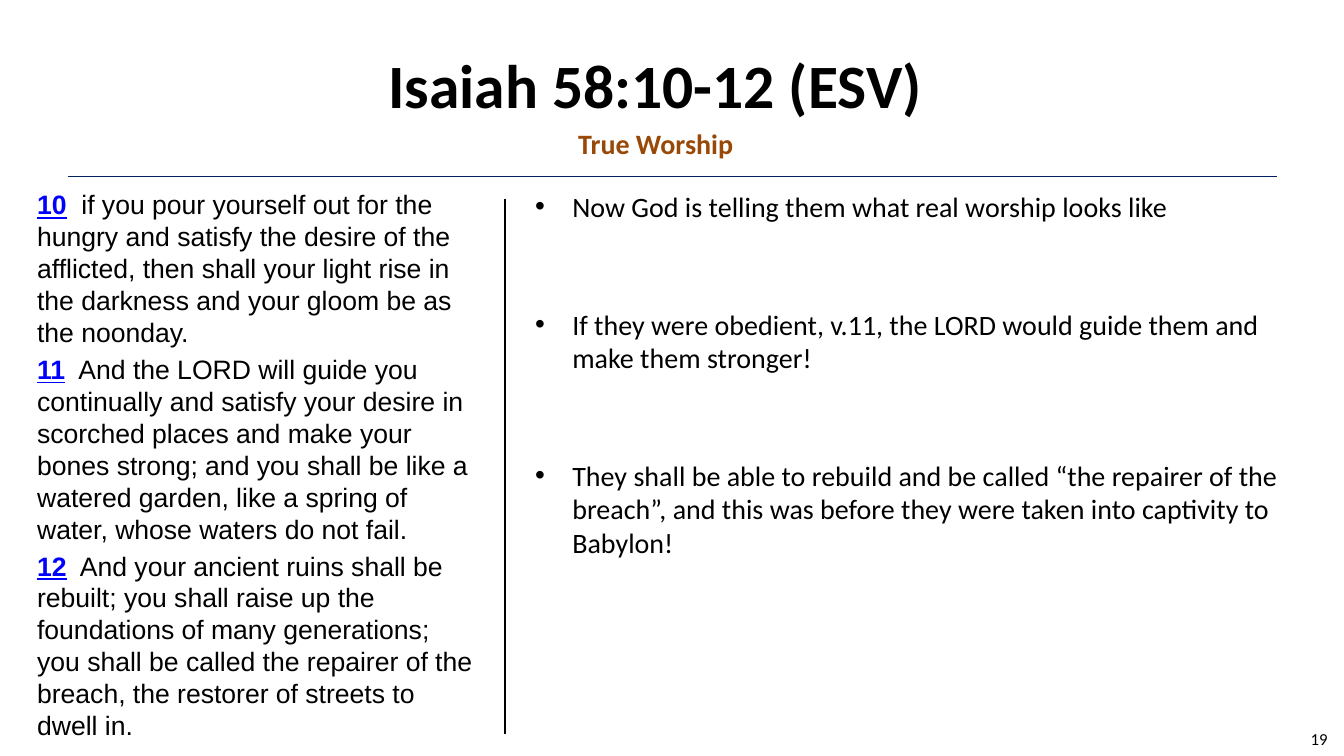
"""Build the Isaiah 58:10-12 scripture slide."""
from lxml import etree
from pptx import Presentation
from pptx.dml.color import RGBColor
from pptx.enum.shapes import MSO_CONNECTOR
from pptx.enum.text import MSO_ANCHOR, PP_ALIGN
from pptx.oxml.ns import qn
from pptx.util import Pt

LEFT, CENTER, RIGHT = PP_ALIGN.LEFT, PP_ALIGN.CENTER, PP_ALIGN.RIGHT
TOP, MIDDLE = MSO_ANCHOR.TOP, MSO_ANCHOR.MIDDLE
STRAIGHT = MSO_CONNECTOR.STRAIGHT

COLORS = {"text": "000000", "verse": "0000FF", "subtitle": "984807", "rule": "002060"}

LABELS = [
    ("Isaiah 58:10-12 (ESV)", (36.3, 15.12, 864, 90), 44, "text", True, CENTER, MIDDLE),
    ("True Worship", (370.08, 86.8, 196.56, 31.68), 20, "subtitle", True, CENTER, TOP),
    ("19", (883.44, 513.36, 72, 28.8), 12, "text", False, RIGHT, MIDDLE),
]
VERSES = [
    ("10", "if you pour yourself out for the hungry and satisfy the desire of the afflicted, "
           "then shall your light rise in the darkness and your gloom be as the noonday."),
    ("11", "And the LORD will guide you continually and satisfy your desire in scorched places "
           "and make your bones strong; and you shall be like a watered garden, "
           "like a spring of water, whose waters do not fail."),
    ("12", "And your ancient ruins shall be rebuilt; you shall raise up the foundations of many "
           "generations; you shall be called the repairer of the breach, "
           "the restorer of streets to dwell in."),
]
NOTES = [
    "Now God is telling them what real worship looks like",
    "If they were obedient, v.11, the LORD would guide them and make them stronger!",
    "They shall be able to rebuild and be called “the repairer of the breach”, "
    "and this was before they were taken into captivity to Babylon!",
]
VERSE_BOX = (19.44, 131.04, 328, 398.88)
NOTES_BOX = (375.12, 131.76, 565.92, 398.88)
RULES = [
    ((48.24, 126, 912.24, 126), "rule", 0.75),
    ((360.72, 141.84, 360.72, 524.16), "text", 1.5),
]
VERSE_GAP, NOTE_GAP, BULLET_INDENT = 3.6, 60, 26.64


def add_text_frame(slide, box, anchor=TOP):
    text_frame = slide.shapes.add_textbox(*map(Pt, box)).text_frame
    text_frame.word_wrap = True
    text_frame.vertical_anchor = anchor
    return text_frame


def next_paragraph(text_frame, index, gap):
    if index == 0:
        return text_frame.paragraphs[0]
    paragraph = text_frame.add_paragraph()
    paragraph.space_before = Pt(gap)
    return paragraph


def style(font, name, size, color, bold=False, underline=False):
    font.name, font.size = name, Pt(size)
    font.bold, font.underline = bold, underline
    font.color.rgb = RGBColor.from_string(COLORS[color])


def add_bullet(paragraph):
    properties = paragraph._p.get_or_add_pPr()
    properties.set("marL", str(Pt(BULLET_INDENT)))
    properties.set("indent", str(-Pt(BULLET_INDENT)))
    etree.SubElement(properties, qn("a:buFont")).set("typeface", "Arial")
    etree.SubElement(properties, qn("a:buChar")).set("char", "•")


def add_label(slide, text, box, size, color, bold, alignment, anchor):
    paragraph = add_text_frame(slide, box, anchor).paragraphs[0]
    paragraph.text = text
    paragraph.alignment = alignment
    style(paragraph.runs[0].font, "Calibri", size, color, bold)


def add_verses(slide):
    text_frame = add_text_frame(slide, VERSE_BOX)
    for index, (number, words) in enumerate(VERSES):
        paragraph = next_paragraph(text_frame, index, VERSE_GAP)
        paragraph.alignment = LEFT
        number_run, words_run = paragraph.add_run(), paragraph.add_run()
        number_run.text, words_run.text = number, "  " + words
        style(number_run.font, "Arial", 19, "verse", True, True)
        style(words_run.font, "Arial", 19, "text")


def add_notes(slide):
    text_frame = add_text_frame(slide, NOTES_BOX)
    for index, note in enumerate(NOTES):
        paragraph = next_paragraph(text_frame, index, NOTE_GAP)
        paragraph.text = note
        add_bullet(paragraph)
        style(paragraph.runs[0].font, "Calibri", 20, "text")


def add_rule(slide, ends, color, width):
    connector = slide.shapes.add_connector(STRAIGHT, *map(Pt, ends))
    connector.line.color.rgb = RGBColor.from_string(COLORS[color])
    connector.line.width = Pt(width)
    etree.SubElement(connector._element.spPr, qn("a:effectLst"))


def main():
    presentation = Presentation()
    presentation.slide_width, presentation.slide_height = Pt(960), Pt(540)
    slide = presentation.slides.add_slide(presentation.slide_layouts[6])
    for label in LABELS:
        add_label(slide, *label)
    add_verses(slide)
    add_notes(slide)
    for rule in RULES:
        add_rule(slide, *rule)
    presentation.save("out.pptx")


if __name__ == "__main__":
    main()
